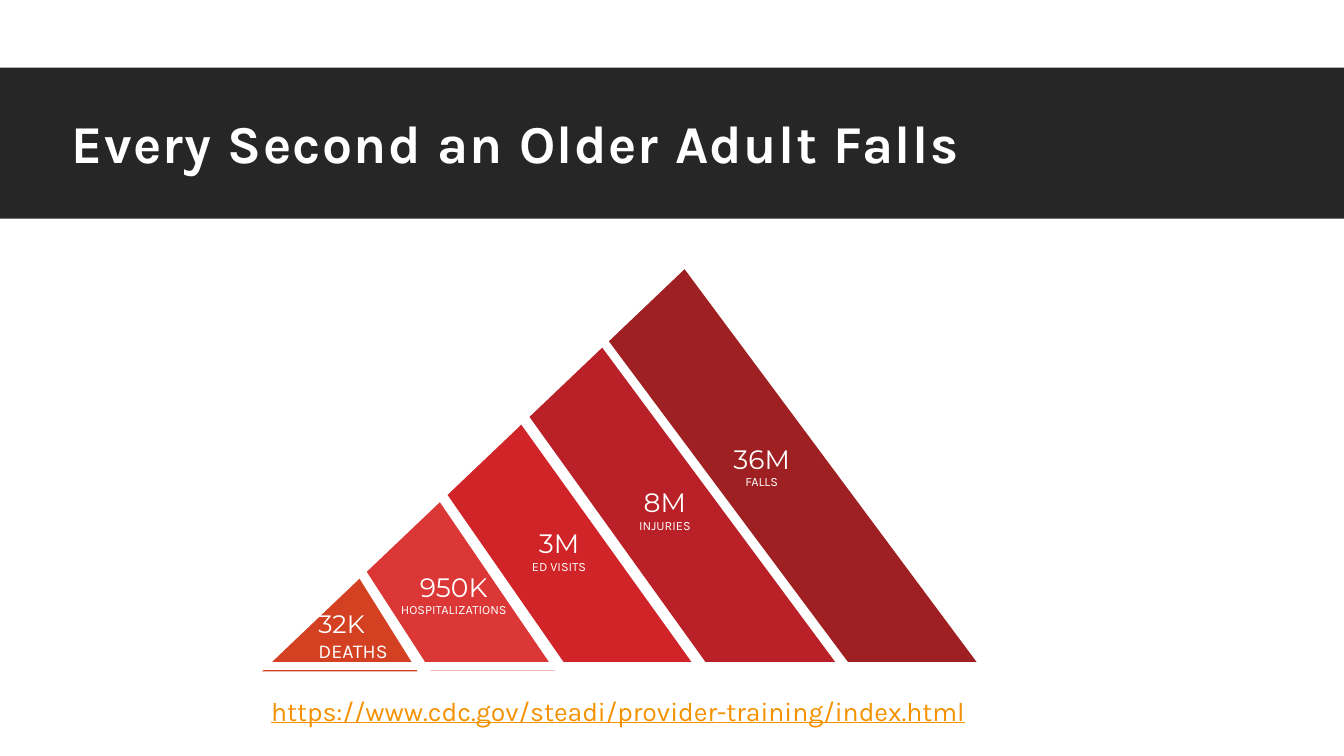
import pptx
import pptx.util
import pptx.dml.color
import pptx.enum.shapes
import pptx.enum.text

Inches = pptx.util.Inches
RGB = pptx.dml.color.RGBColor
ALIGN = pptx.enum.text.PP_ALIGN
ANCHOR = pptx.enum.text.MSO_ANCHOR

WHITE = RGB(0xFF, 0xFF, 0xFF)
DARK = RGB(0x26, 0x26, 0x26)
AMBER = RGB(0xF4, 0x91, 0x00)
ORANGE = RGB(0xD3, 0x41, 0x22)
CORAL = RGB(0xDC, 0x37, 0x37)
RED = RGB(0xD1, 0x24, 0x28)
CRIMSON = RGB(0xB9, 0x20, 0x27)
MAROON = RGB(0x9F, 0x20, 0x22)


def write(frame, rows, color=WHITE, align=ALIGN.CENTER, bold=False,
          underline=False, anchor=ANCHOR.TOP):
    """Fill a text frame with one paragraph per (text, size, font) row."""
    frame.word_wrap = True
    frame.vertical_anchor = anchor
    for i, (text, size, face) in enumerate(rows):
        para = frame.paragraphs[0] if i == 0 else frame.add_paragraph()
        para.alignment = align
        run = para.add_run()
        run.text = text
        font = run.font
        font.name, font.size = face, pptx.util.Pt(size)
        font.bold, font.underline = bold, underline
        font.color.rgb = color
    return frame


def block(left, top, width, height, color):
    shape = slide.shapes.add_shape(
        pptx.enum.shapes.MSO_SHAPE.RECTANGLE,
        Inches(left), Inches(top), Inches(width), Inches(height))
    shape.shadow.inherit = False
    shape.fill.solid()
    shape.fill.fore_color.rgb = color
    shape.line.color.rgb = color
    shape.line.width = pptx.util.Pt(0.75)
    return shape


deck = pptx.Presentation()
deck.slide_width, deck.slide_height = Inches(13.33), Inches(7.5)
slide = deck.slides.add_slide(deck.slide_layouts[5])

# Title on its dark band
band = block(0, 0.67, 13.33, 1.5, DARK)
band.line.fill.background()
title = slide.shapes.title
title.element.getparent().append(title.element)
title.left, title.top = Inches(0.61), Inches(0.71)
title.width, title.height = Inches(10.31), Inches(1.41)
write(title.text_frame, [("Every Second an Older Adult Falls", 38, "Karla")],
      align=ALIGN.LEFT, bold=True, anchor=ANCHOR.MIDDLE)
title.text_frame.paragraphs[0].runs[0].font._element.set("spc", "100")

# Web address
link = slide.shapes.add_textbox(
    Inches(1.51), Inches(6.84), Inches(9.24), Inches(0.42))
write(link.text_frame,
      [("https://www.cdc.gov/steadi/provider-training/index.html", 19, "Karla")],
      color=AMBER, underline=True)

# Slices of the pyramid
slices = [
    (CORAL, [(5.5, 6.65), (4.32, 4.92), (3.61, 5.63), (4.27, 6.65)]),
    (ORANGE, [(4.14, 6.66), (3.54, 5.7), (2.57, 6.66)]),
    (RED, [(6.91, 6.64), (5.11, 4.13), (4.39, 4.84), (5.64, 6.64)]),
    (CRIMSON, [(8.33, 6.63), (5.9, 3.35), (5.19, 4.05), (7.05, 6.64)]),
    (MAROON, [(9.71, 6.6), (6.7, 2.55), (5.96, 3.28), (8.45, 6.62)]),
]
for color, points in slices:
    start, *rest = [(Inches(x), Inches(y)) for x, y in points]
    pen = slide.shapes.build_freeform(*start)
    pen.add_line_segments(rest, close=True)
    piece = pen.convert_to_shape()
    piece.shadow.inherit = False
    piece.fill.solid()
    piece.fill.fore_color.rgb = color
    piece.line.fill.background()

# Count and name on each slice
labels = [
    (3.06, 5.99, 1.1, "32K", 18, "DEATHS", 14, ALIGN.LEFT),
    (3.8, 5.61, 1.4, "950K", 19, "HOSPITALIZATIONS", 9, ALIGN.CENTER),
    (4.86, 5.18, 1.37, "3M", 19, "ED VISITS", 9, ALIGN.CENTER),
    (5.91, 4.77, 1.37, "8M", 19, "INJURIES", 9, ALIGN.CENTER),
    (6.87, 4.34, 1.37, "36M", 19, "FALLS", 9, ALIGN.CENTER),
]
for left, top, width, count, big, name, small, align in labels:
    label = slide.shapes.add_textbox(
        Inches(left), Inches(top), Inches(width), Inches(0.61))
    write(label.text_frame,
          [(count, big, "Montserrat"), (name, small, "Karla")], align=align)

# White strips that trim the base and the left edge
block(2.57, 6.57, 7.29, 0.07, WHITE)
edge = block(1.67, 4.4, 5.84, 0.3, WHITE)
edge.rotation = 316.4

deck.save("out.pptx")
